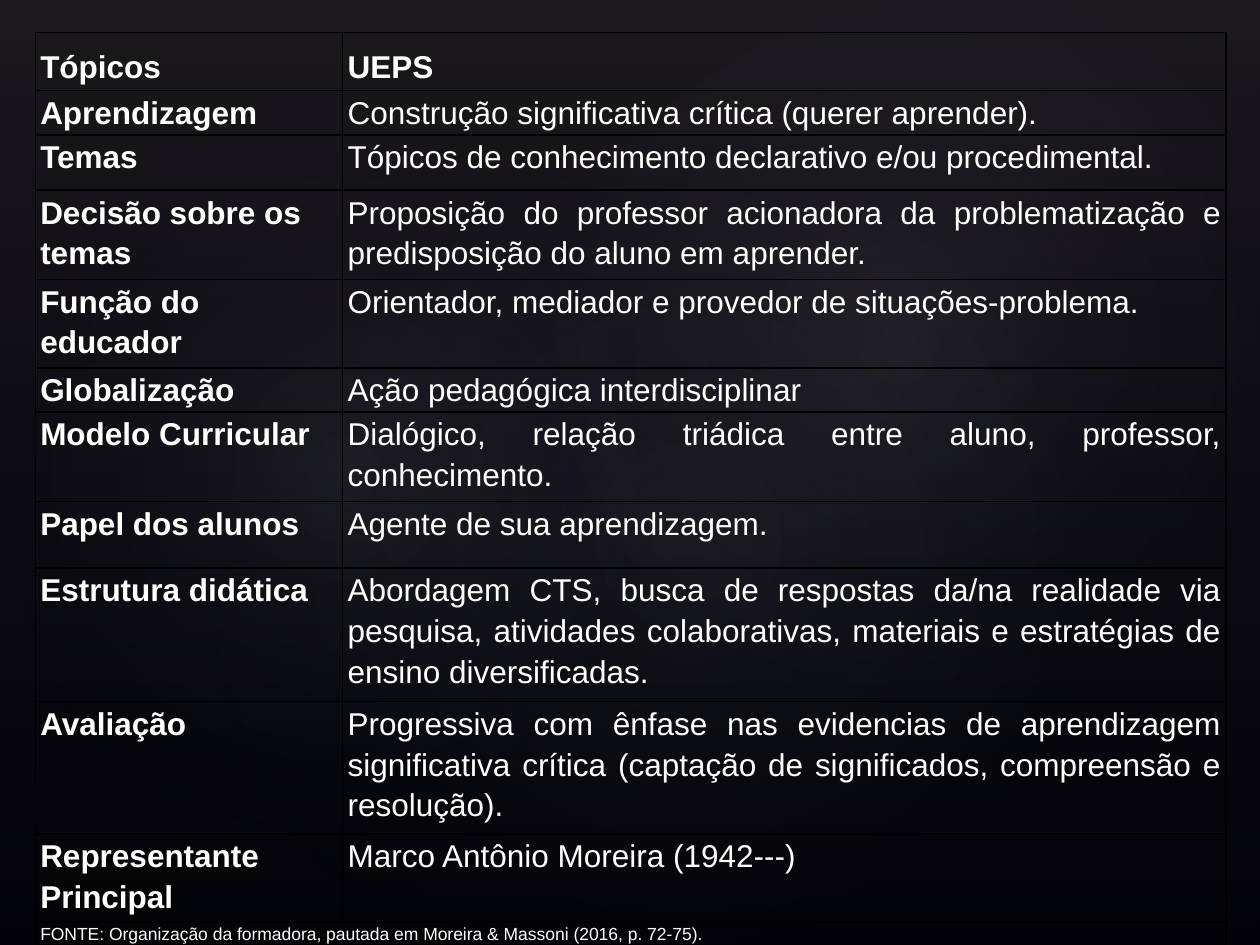
from lxml import etree
from pptx import Presentation, util as u
from pptx.dml.color import RGBColor
from pptx.enum import shapes, text
from pptx.oxml import ns

THEME = {
    "font": "Arial", "body": 18, "source": 10, "border": 1,
    "ink": "FFFFFF", "line": "000000", "page": "000000",
    "top": "504652", "base": "242852", "glow": "C4BCC6",
}

deck = Presentation()
deck.slide_width, deck.slide_height = u.Inches(10), u.Inches(7.5)
page = deck.slides.add_slide(deck.slide_layouts[6])
page.background.fill.solid()
page.background.fill.fore_color.rgb = RGBColor.from_string(THEME["page"])
UNIT = deck.slide_width / 100  # the slide is 100 columns by 75 rows


def add_glow(kind, area, stops, direction, turn=0):
    """Add a borderless shape with a translucent gradient; stops are (position, colour, opacity)."""
    shape = page.shapes.add_shape(kind, *(round(side * UNIT) for side in area))
    shape.rotation = turn
    shape.shadow.inherit = False
    shape.line.fill.background()
    shape.fill.background()
    marks = "".join(
        f'<a:gs pos="{place * 1000}"><a:srgbClr val="{colour}">'
        f'<a:alpha val="{opacity * 1000}"/></a:srgbClr></a:gs>'
        for place, colour, opacity in stops)
    gradient = etree.fromstring(
        f'<a:gradFill {ns.nsdecls("a")} rotWithShape="1"><a:gsLst>{marks}</a:gsLst>{direction}</a:gradFill>')
    properties = shape.element.spPr
    properties.replace(properties.find(ns.qn("a:noFill")), gradient)


def write(cell, words, size=THEME["body"], bold=False, align=None, spacing=1.15):
    """Fill a table cell with one formatted paragraph."""
    cell.margin_left = cell.margin_right = round(0.4 * UNIT)
    cell.margin_top = cell.margin_bottom = 0
    para = cell.text_frame.paragraphs[0]
    para.alignment, para.line_spacing = align, spacing
    span = para.add_run()
    span.text = words
    span.font.name, span.font.size, span.font.bold = THEME["font"], u.Pt(size), bold
    span.font.color.rgb = RGBColor.from_string(THEME["ink"])


# Backdrop: a vertical veil and three soft lights
add_glow(shapes.MSO_SHAPE.RECTANGLE, (0, 0, 100, 75),
         [(0, THEME["top"], 36), (100, THEME["base"], 10)], '<a:lin ang="5400000" scaled="0"/>')
RADIAL = '<a:path path="circle"><a:fillToRect l="50000" t="50000" r="50000" b="50000"/></a:path>'
for area, turn, opacity in [
    ((15, 11.4, 79.2, 62.4), 328.7, 7),
    ((-3, 12.8, 60.6, 49), 294.3, 8),
    ((35.8, 1.3, 70.9, 52), 328.7, 8),
]:
    add_glow(shapes.MSO_SHAPE.OVAL, area,
             [(0, THEME["glow"], opacity), (58, THEME["base"], 0)], RADIAL, turn)

# Table content: row height in grid units, topic, description
ROWS = [
    (4.6, "Tópicos", "UEPS"),
    (3.5, "Aprendizagem", "Construção significativa crítica (querer aprender)."),
    (4.4, "Temas", "Tópicos de conhecimento declarativo e/ou procedimental."),
    (7.1, "Decisão sobre os temas",
     "Proposição do professor acionadora da problematização e predisposição do aluno em aprender."),
    (7, "Função do educador", "Orientador, mediador e provedor de situações-problema."),
    (3.5, "Globalização", "Ação pedagógica interdisciplinar"),
    (7.1, "Modelo Curricular", "Dialógico, relação triádica entre aluno, professor, conhecimento."),
    (5.3, "Papel dos alunos", "Agente de sua aprendizagem."),
    (10.6, "Estrutura didática",
     "Abordagem CTS, busca de respostas da/na realidade via pesquisa, atividades colaborativas, "
     "materiais e estratégias de ensino diversificadas."),
    (10.5, "Avaliação",
     "Progressiva com ênfase nas evidencias de aprendizagem significativa crítica "
     "(captação de significados, compreensão e resolução)."),
    (7, "Representante Principal", "Marco Antônio Moreira (1942---)"),
]
SOURCE = "FONTE: Organização da formadora, pautada em Moreira & Massoni (2016, p. 72-75)."
COLUMNS = (24.4, 70.1)
heights = [row[0] for row in ROWS] + [1.8]

frame = page.shapes.add_table(len(heights), len(COLUMNS), *(
    round(side * UNIT) for side in (2.8, 2.6, sum(COLUMNS), sum(heights))))
table = frame.table
table.first_row = table.horz_banding = False
for column, width in zip(table.columns, COLUMNS):
    column.width = round(width * UNIT)
for row, height in zip(table.rows, heights):
    row.height = round(height * UNIT)

# Topics in bold, descriptions justified, header with wider leading
for index, (_, topic, description) in enumerate(ROWS):
    header = index == 0
    spacing = 1.5 if header else 1.15
    write(table.cell(index, 0), topic, bold=True, spacing=spacing)
    write(table.cell(index, 1), description, bold=header, spacing=spacing,
          align=None if header else text.PP_ALIGN.JUSTIFY)

# Source line across both columns
last = len(ROWS)
table.cell(last, 0).merge(table.cell(last, 1))
write(table.cell(last, 0), SOURCE, size=THEME["source"])

# Clear cells with thin borders
for cell in table.iter_cells():
    cell.fill.background()
    properties = cell._tc.get_or_add_tcPr()
    for place, side in enumerate(("lnL", "lnR", "lnT", "lnB")):
        properties.insert(place, etree.fromstring(
            f'<a:{side} {ns.nsdecls("a")} w="{u.Pt(THEME["border"])}"><a:solidFill>'
            f'<a:srgbClr val="{THEME["line"]}"/></a:solidFill></a:{side}>'))

deck.save("out.pptx")
